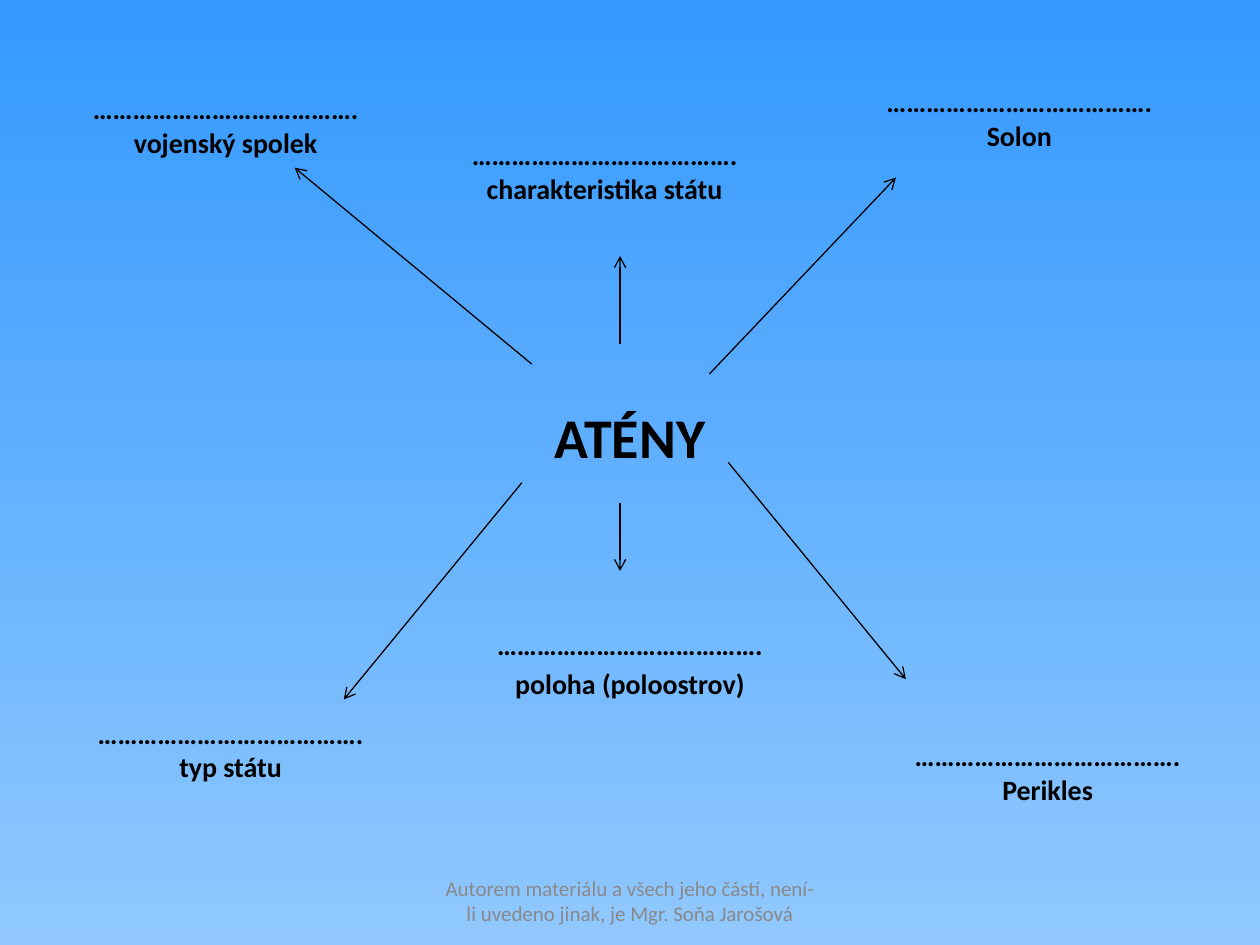
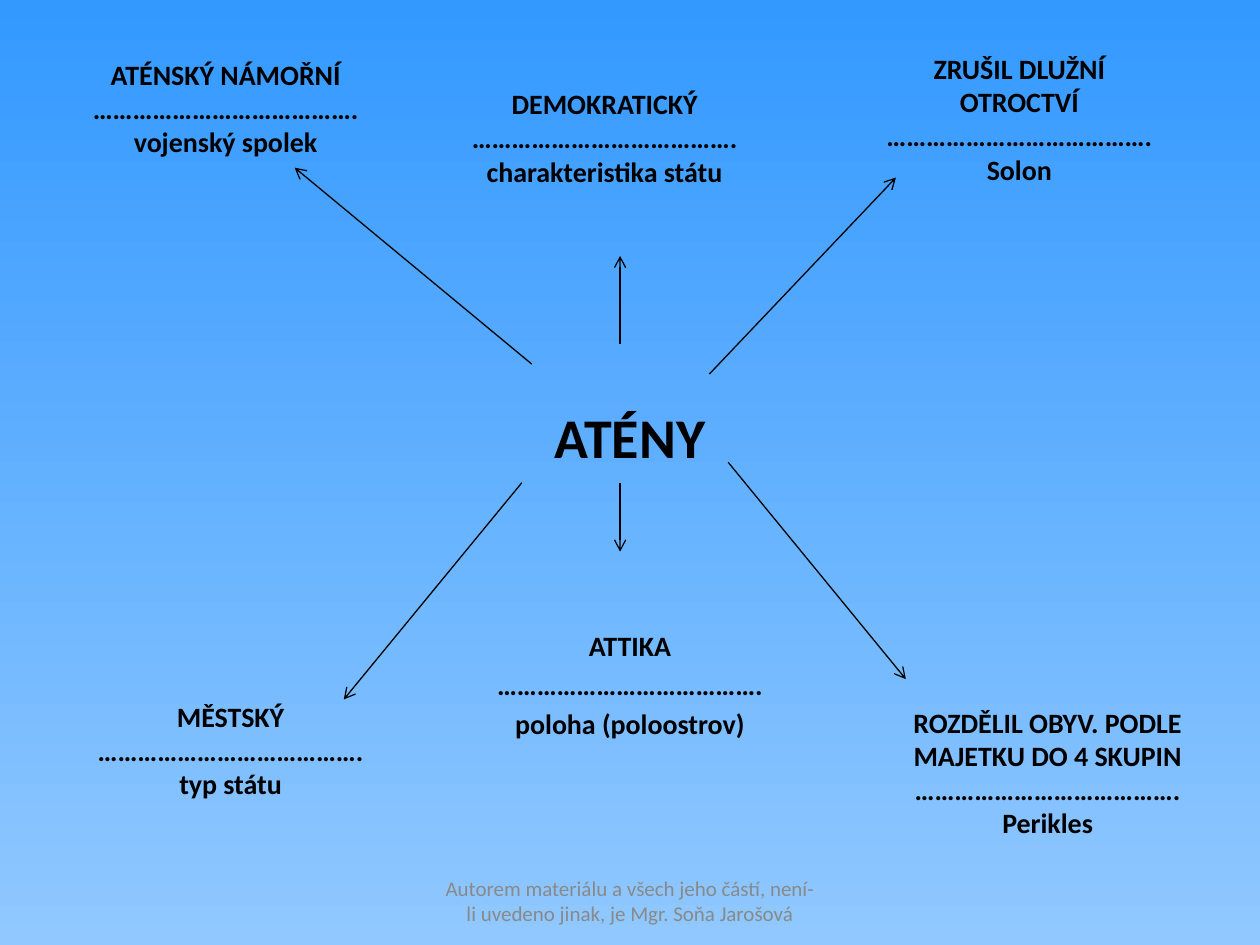
from typing import NamedTuple

from lxml.etree import SubElement
from pptx import Presentation
from pptx.dml.color import RGBColor
from pptx.enum.shapes import MSO_CONNECTOR
from pptx.enum.text import MSO_ANCHOR, MSO_AUTO_SIZE, PP_ALIGN
from pptx.oxml.ns import qn
from pptx.util import Cm, Pt

FONT = "Calibri"
BLACK, GREY = "000000", "898989"
SKY, PALE = "3399FF", "91C8FF"
DOTS = "…………………………………."
TOPIC = "ATÉNY"
CREDIT = "Autorem materiálu a všech jeho částí, není-li uvedeno jinak, je Mgr. Soňa Jarošová"


class Box(NamedTuple):
    x: float
    y: float
    width: float
    height: float = 2.8


class Style(NamedTuple):
    size: int = 16
    bold: bool = True
    color: str = BLACK
    gap: int = 0


class Label(NamedTuple):
    hint: str
    answer: str
    task: Box
    key: Box
    style: Style = Style()


class Arrow(NamedTuple):
    x: float
    y: float
    end_x: float
    end_y: float


PLAIN = Style()
CENTER = Box(12.7, 8.8, 10, 1.6)
FOOTER = Box(12.7, 18.16, 8.05, 1.02)

TITLE = Label("vojenský spolek", "ATÉNSKÝ NÁMOŘNÍ", Box(4.55, 2.53, 7.92), Box(4.55, 2.18, 7.92))
LABELS = [
    Label("charakteristika státu", "DEMOKRATICKÝ", Box(12.19, 3.45, 6.15), Box(12.19, 2.77, 6.15)),
    Label("Solon", "ZRUŠIL DLUŽNÍ OTROCTVÍ", Box(20.55, 2.39, 6.15), Box(20.55, 2.39, 6.15)),
    Label("Perikles", "ROZDĚLIL OBYV. PODLE MAJETKU DO 4 SKUPIN",
          Box(21.12, 15.57, 6.93), Box(21.12, 15.57, 6.93)),
    Label("typ státu", "MĚSTSKÝ", Box(4.65, 15.12, 6.15), Box(4.65, 15.12, 6.15)),
    Label("poloha (poloostrov)", "ATTIKA", Box(12.7, 13.39, 8), Box(12.7, 13.79, 8), Style(gap=3)),
]

ARROWS = [
    Arrow(14.68, 9.32, 18.26, 13.69),
    Arrow(10.52, 9.73, 6.93, 14.1),
    Arrow(12.5, 6.93, 12.5, 5.16),
    Arrow(10.72, 7.34, 5.94, 3.38),
    Arrow(14.3, 7.54, 18.06, 3.58),
]
TASK_DOWN = Arrow(12.5, 10.13, 12.5, 11.51)
KEY_DOWN = Arrow(12.5, 9.73, 12.5, 11.12)


def rgb(code: str) -> RGBColor:
    return RGBColor.from_string(code)


def paint(master) -> None:
    fill = master.background.fill
    fill.gradient()
    fill.gradient_angle = 270
    for stop, code in zip(fill.gradient_stops, (SKY, PALE)):
        stop.color.rgb = rgb(code)


def write(shape, text: str, box: Box, style: Style) -> None:
    shape.left, shape.top = Cm(box.x - box.width / 2), Cm(box.y - box.height / 2)
    shape.width, shape.height = Cm(box.width), Cm(box.height)
    frame = shape.text_frame
    frame.text = text
    frame.word_wrap = True
    frame.auto_size = MSO_AUTO_SIZE.NONE
    frame.vertical_anchor = MSO_ANCHOR.MIDDLE
    for index, line in enumerate(frame.paragraphs):
        line.alignment = PP_ALIGN.CENTER
        line.space_before = Pt(style.gap if index else 0)
        for run in line.runs:
            font = run.font
            font.name, font.size, font.bold = FONT, Pt(style.size), style.bold
            font.color.rgb = rgb(style.color)


def add_text(slide, text: str, box: Box, style: Style) -> None:
    write(slide.shapes.add_textbox(0, 0, 0, 0), text, box, style)


def add_label(shape, label: Label, solved: bool) -> None:
    lines = [label.answer] if solved else []
    text = "\n".join(lines + [DOTS, label.hint])
    write(shape, text, label.key if solved else label.task, label.style)


def add_arrow(slide, arrow: Arrow) -> None:
    line = slide.shapes.add_connector(MSO_CONNECTOR.STRAIGHT, *map(Cm, arrow))
    line.line.color.rgb = rgb(BLACK)
    line.line.width = Pt(0.75)
    props = line._element.spPr
    SubElement(props.find(qn("a:ln")), qn("a:tailEnd"), type="arrow")
    SubElement(props, qn("a:effectLst"))


def add_map(deck, solved: bool) -> None:
    slide = deck.slides.add_slide(deck.slide_layouts.get_by_name("Title Only"))
    add_label(slide.shapes.title, TITLE, solved)
    add_text(slide, TOPIC, CENTER, Style(size=32))
    add_text(slide, CREDIT, FOOTER, Style(12, False, GREY))
    for arrow in [KEY_DOWN if solved else TASK_DOWN, *ARROWS]:
        add_arrow(slide, arrow)
    for label in LABELS:
        add_label(slide.shapes.add_textbox(0, 0, 0, 0), label, solved)


def main() -> None:
    deck = Presentation()
    deck.slide_width, deck.slide_height = Cm(25.4), Cm(19.05)
    paint(deck.slide_master)
    for solved in (False, True):
        add_map(deck, solved)
    deck.save("out.pptx")


if __name__ == "__main__":
    main()
